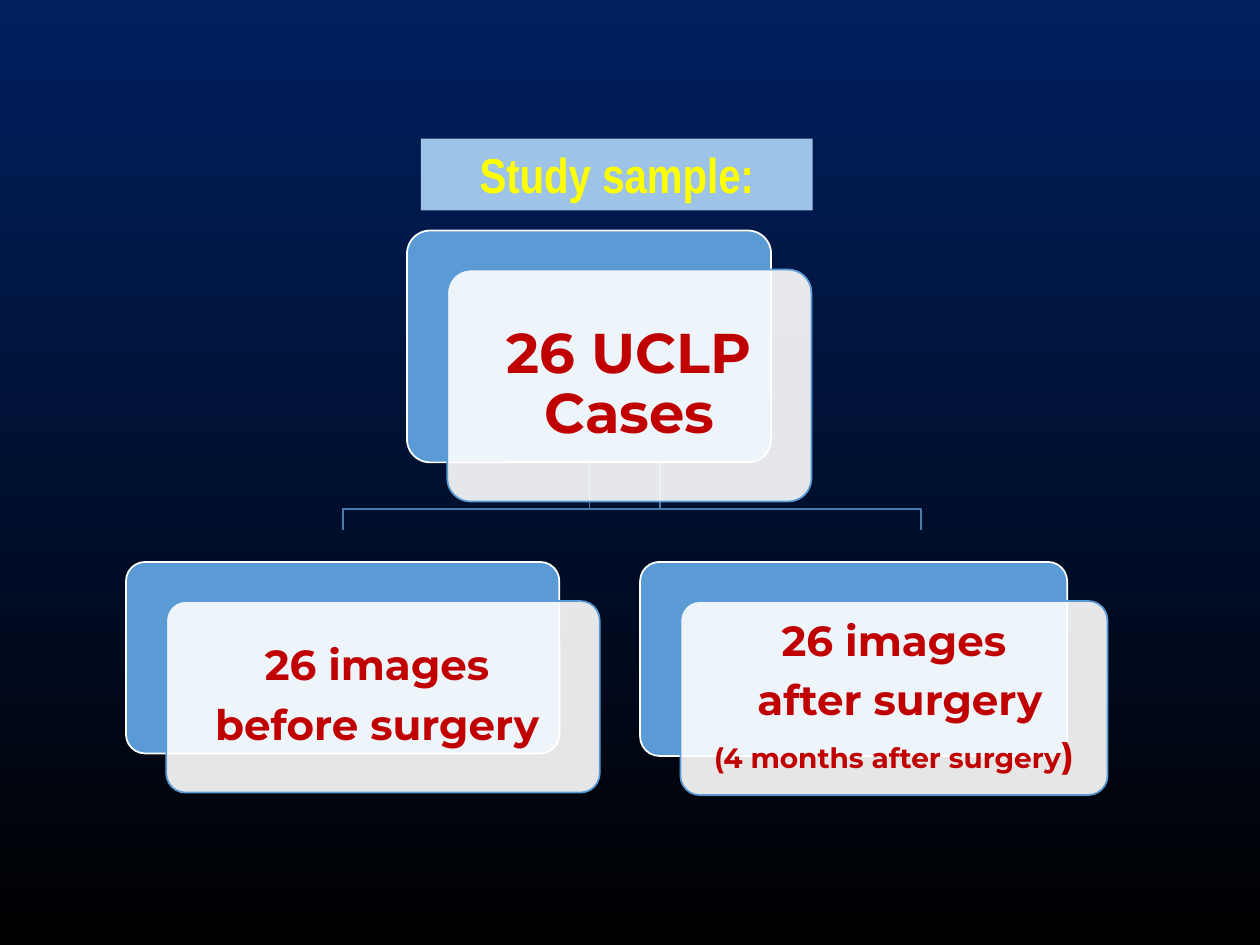
from dataclasses import dataclass

from lxml.etree import SubElement
from pptx import Presentation
from pptx.dml.color import RGBColor
from pptx.enum.shapes import MSO_SHAPE
from pptx.enum.text import MSO_ANCHOR, MSO_AUTO_SIZE, PP_ALIGN
from pptx.oxml.ns import qn
from pptx.util import Inches, Pt


@dataclass(frozen=True)
class Theme:
    top: str = "002060"
    base: str = "000000"
    band: str = "9DC3E6"
    head: str = "FFFF00"
    blue: str = "5B9BD5"
    link: str = "497CAB"
    white: str = "FFFFFF"
    red: str = "C00000"
    title: int = 28
    root: int = 32
    leaf: int = 24
    note: int = 16
    mark: int = 20


theme = Theme()


def style(font, name, size, color):
    for key, value in {"name": name, "size": Pt(size), "bold": True}.items():
        setattr(font, key, value)
    font.color.rgb = RGBColor.from_string(color)


def panel(shapes, box, fill, line):
    """Add a rounded panel with a thin outline."""
    shape = shapes.add_shape(MSO_SHAPE.ROUNDED_RECTANGLE, *map(Inches, box))
    shape.adjustments[0] = 0.1
    shape.shadow.inherit = False
    shape.fill.solid()
    shape.fill.fore_color.rgb = RGBColor.from_string(fill)
    shape.line.color.rgb = RGBColor.from_string(line)
    shape.line.width = Pt(1)
    return shape


deck = Presentation()
deck.slide_width, deck.slide_height = Inches(10), Inches(7.5)
slide = deck.slides.add_slide(deck.slide_layouts[5])
shapes = slide.shapes

# Background
back = slide.background.fill
back.gradient()
back.gradient_angle = 270
for stop, color, place in zip(back.gradient_stops, (theme.top, theme.base), (0, 1)):
    stop.color.rgb = RGBColor.from_string(color)
    stop.position = place

# Title
title = shapes.title
place = {"left": 3.34, "top": 1.1, "width": 3.11, "height": 0.57}
for key, value in place.items():
    setattr(title, key, Inches(value))
title.fill.solid()
title.fill.fore_color.rgb = RGBColor.from_string(theme.band)
title.text_frame.auto_size = MSO_AUTO_SIZE.NONE
title.text_frame.vertical_anchor = MSO_ANCHOR.TOP
title.text = "Study sample:"
para = title.text_frame.paragraphs[0]
para.alignment = PP_ALIGN.CENTER
style(para.runs[0].font, "Arial Narrow", theme.title, theme.head)

# Branches from the root to each leaf
for start, end in ((4.68, 7.31), (5.24, 2.72)):
    path = shapes.build_freeform(Inches(start), Inches(3.67))
    turns = ((start, 4.04), (end, 4.04), (end, 4.21))
    path.add_line_segments([(Inches(x), Inches(y)) for x, y in turns], close=False)
    branch = path.convert_to_shape()
    branch.shadow.inherit = False
    branch.fill.background()
    branch.line.color.rgb = RGBColor.from_string(theme.link)
    branch.line.width = Pt(1)

# Cards: box, inset, space after, lines of (text, size) runs
cards = (
    ((3.23, 1.83, 2.89, 1.84), 0.19, 11, [[("26 UCLP Cases", theme.root)]]),
    ((1, 4.46, 3.44, 1.52), 0.15, 8,
     [[("26 images ", theme.leaf)], [("before surgery ", theme.leaf)]]),
    ((5.08, 4.46, 3.39, 1.54), 0.15, 8,
     [[("26 images", theme.leaf)], [(" after surgery", theme.leaf)],
      [("(4 months after surgery", theme.note), (")", theme.mark)]]),
)
for (left, top, wide, high), inset, gap, lines in cards:
    panel(shapes, (left, top, wide, high), theme.blue, theme.white)
    front = (left + 0.32, top + 0.31, wide, high)
    card = panel(shapes, front, theme.white, theme.blue)
    tint = card.fill._xPr.find(qn("a:solidFill"))[0]
    SubElement(tint, qn("a:alpha")).set("val", "90000")

    frame = card.text_frame
    frame.word_wrap = True
    frame.vertical_anchor = MSO_ANCHOR.MIDDLE
    for side in ("left", "right", "top", "bottom"):
        setattr(frame, f"margin_{side}", Inches(inset))
    for index, line in enumerate(lines):
        para = frame.add_paragraph() if index else frame.paragraphs[0]
        form = {"alignment": PP_ALIGN.CENTER, "line_spacing": 0.9,
                "space_after": Pt(gap)}
        for key, value in form.items():
            setattr(para, key, value)
        for text, size in line:
            run = para.add_run()
            run.text = text
            style(run.font, "Montserrat", size, theme.red)

deck.save("out.pptx")
